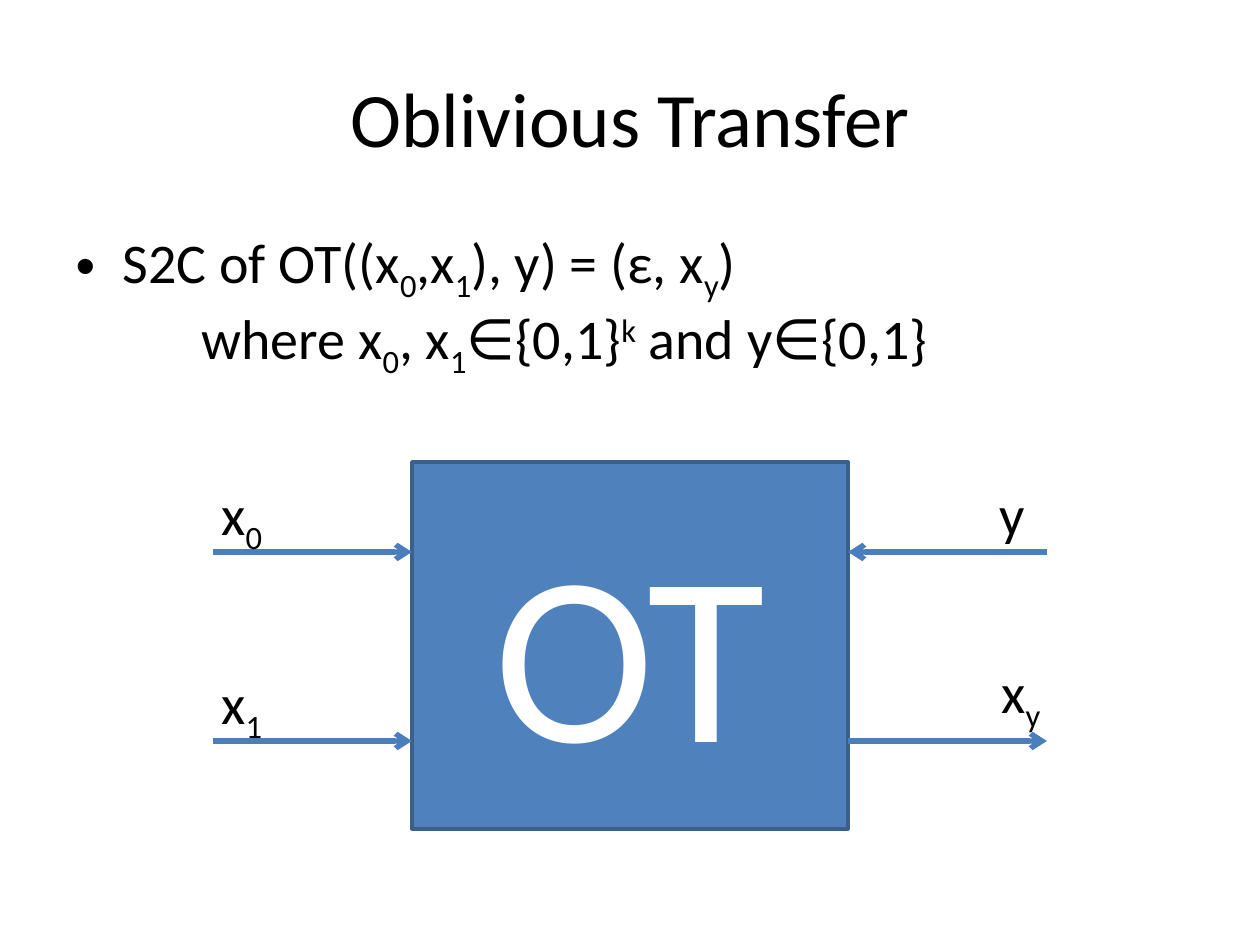
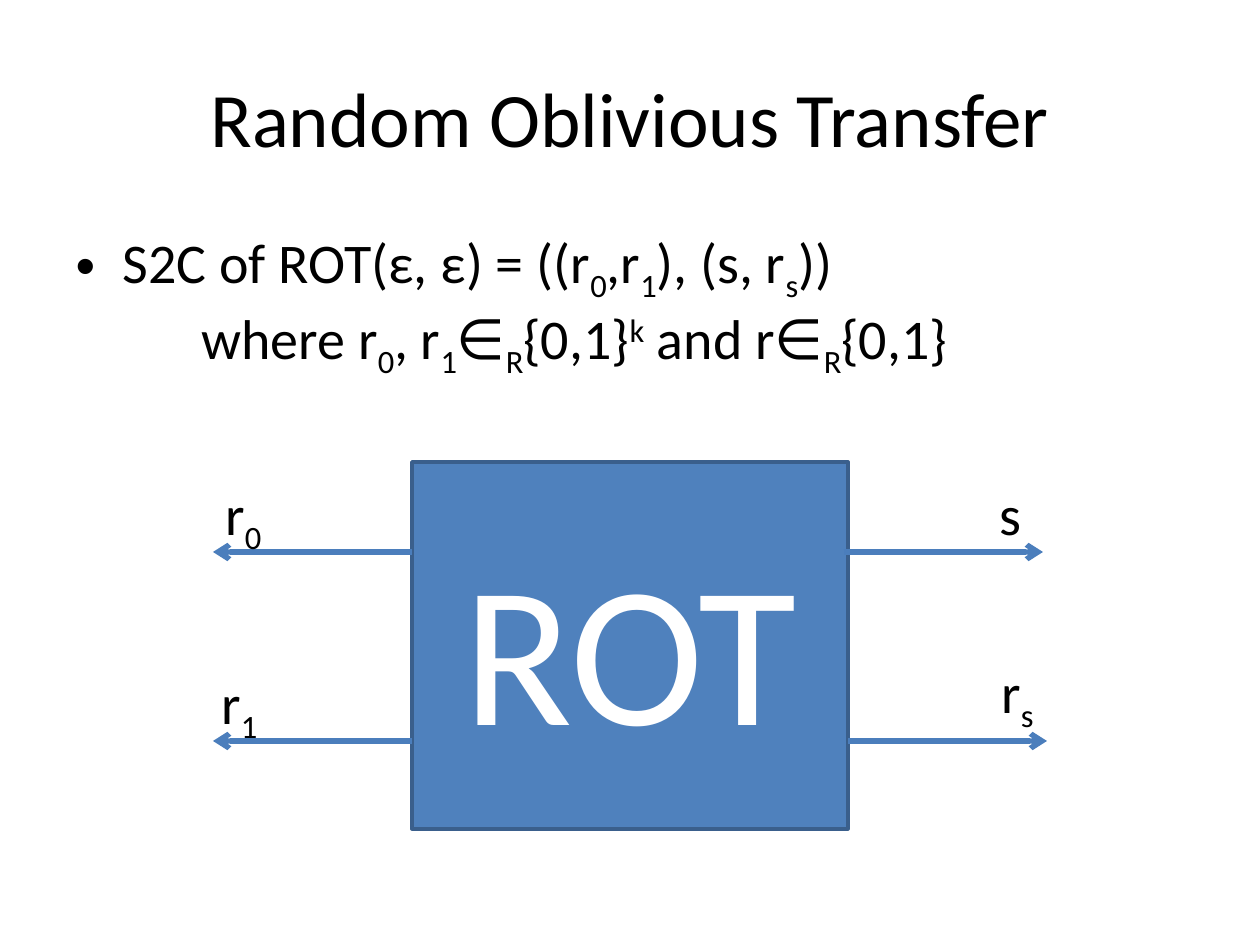
from dataclasses import dataclass

from lxml import etree
from pptx import Presentation
from pptx import util as u
from pptx.dml.color import RGBColor
from pptx.enum import shapes, text
from pptx.oxml.ns import qn


@dataclass(frozen=True)
class Theme:
    font: str = "Calibri"
    ink: str = "000000"
    paper: str = "FFFFFF"
    box: str = "4F81BD"
    box_line: str = "3A5F8C"
    arrow: str = "4B7EBC"
    title: int = 44
    body: int = 32
    box_width: int = 2
    arrow_width: int = 3


THEME = Theme()
PX_PER_INCH = 126
BASELINES = {"_": "-25000", "^": "30000"}
BOX = (412, 462, 436, 367)
LEFT, RIGHT = BOX[0], BOX[0] + BOX[2]
ARROW_LENGTH = 199
TOP_Y, BOTTOM_Y = 552, 741
LABEL_HEIGHT = 81


def px(n):
    return u.Emu(round(n * u.Inches(1) / PX_PER_INCH))


def rgb(value):
    return RGBColor.from_string(value)


def place(sp, left, top, width, height):
    sp.left, sp.top, sp.width, sp.height = map(px, (left, top, width, height))


def write(p, markup, size, color=THEME.ink):
    for part in markup.split("|"):
        r = p.add_run()
        r.text = part.lstrip("_^")
        r.font.name = THEME.font
        r.font.size = u.Pt(size)
        r.font.color.rgb = rgb(color)
        if part[0] in BASELINES:
            r._r.get_or_add_rPr().set("baseline", BASELINES[part[0]])


def add_title(s, title):
    sp = s.shapes.title
    place(sp, 63, 38, 1134, 158)
    tf = sp.text_frame
    tf.auto_size = text.MSO_AUTO_SIZE.NONE
    tf.vertical_anchor = text.MSO_ANCHOR.MIDDLE
    p = tf.paragraphs[0]
    p.alignment = text.PP_ALIGN.CENTER
    write(p, title, THEME.title)


def add_definition(s, formula, condition):
    sp = s.placeholders[1]
    place(sp, 63, 221, 1134, 173)
    tf = sp.text_frame
    tf.auto_size = text.MSO_AUTO_SIZE.NONE
    write(tf.paragraphs[0], formula, THEME.body)
    p = tf.add_paragraph()
    p.space_before = u.Pt(0)
    pPr = p._p.get_or_add_pPr()
    pPr.set("marL", str(u.Inches(1)))
    pPr.set("indent", "0")
    etree.SubElement(pPr, qn("a:buNone"))
    write(p, condition, THEME.body)


def add_box(s, name, size):
    sp = s.shapes.add_shape(shapes.MSO_SHAPE.RECTANGLE, *map(px, BOX))
    sp.shadow.inherit = False
    sp.fill.solid()
    sp.fill.fore_color.rgb = rgb(THEME.box)
    sp.line.color.rgb = rgb(THEME.box_line)
    sp.line.width = u.Pt(THEME.box_width)
    tf = sp.text_frame
    tf.vertical_anchor = text.MSO_ANCHOR.MIDDLE
    p = tf.paragraphs[0]
    p.alignment = text.PP_ALIGN.CENTER
    write(p, name, size, THEME.paper)


def add_arrow(s, start, end, y):
    c = s.shapes.add_connector(shapes.MSO_CONNECTOR.STRAIGHT,
                               px(start), px(y), px(end), px(y))
    c.line.color.rgb = rgb(THEME.arrow)
    c.line.width = u.Pt(THEME.arrow_width)
    etree.SubElement(c.line._get_or_add_ln(), qn("a:tailEnd"), type="arrow")
    etree.SubElement(c._element.spPr, qn("a:effectLst"))


def add_label(s, markup, left, top, width):
    sp = s.shapes.add_textbox(*map(px, (left, top, width, LABEL_HEIGHT)))
    tf = sp.text_frame
    tf.word_wrap = False
    tf.auto_size = text.MSO_AUTO_SIZE.SHAPE_TO_FIT_TEXT
    write(tf.paragraphs[0], markup, THEME.body)


def add_protocol(prs, title, formula, condition, box, arrows, labels):
    s = prs.slides.add_slide(prs.slide_layouts[1])
    add_title(s, title)
    add_definition(s, formula, condition)
    add_box(s, *box)
    for arrow in arrows:
        add_arrow(s, *arrow)
    for label in labels:
        add_label(s, *label)


def main():
    prs = Presentation()
    prs.slide_width, prs.slide_height = u.Inches(10), u.Inches(7.5)
    far_left, far_right = LEFT - ARROW_LENGTH, RIGHT + ARROW_LENGTH
    add_protocol(
        prs, "Oblivious Transfer",
        "S2C of OT((x|_0|,x|_1|), y) = (ε, x|_y|)",
        "where x|_0|, x|_1|∈{0,1}|^k| and y∈{0,1}",
        ("OT", 138),
        [(far_left, LEFT, TOP_Y), (far_left, LEFT, BOTTOM_Y),
         (far_right, RIGHT, TOP_Y), (RIGHT, far_right, BOTTOM_Y)],
        [("x|_0", 209, 473, 69), ("x|_1", 209, 662, 69),
         ("y", 987, 473, 52), ("x|_y", 989, 651, 67)])
    add_protocol(
        prs, "Random Oblivious Transfer",
        "S2C of ROT(ε, ε) = ((r|_0|,r|_1|), (s, r|_s|))",
        "where r|_0|, r|_1|∈|_R|{0,1}|^k| and r∈|_R|{0,1}",
        ("ROT", 115),
        [(LEFT, far_left, TOP_Y), (LEFT, far_left, BOTTOM_Y),
         (RIGHT - 4, far_right - 4, TOP_Y), (RIGHT, far_right, BOTTOM_Y)],
        [("r|_0", 213, 473, 64), ("r|_1", 209, 662, 64),
         ("s", 987, 473, 48), ("r|_s", 989, 651, 59)])
    prs.save("out.pptx")


if __name__ == "__main__":
    main()
